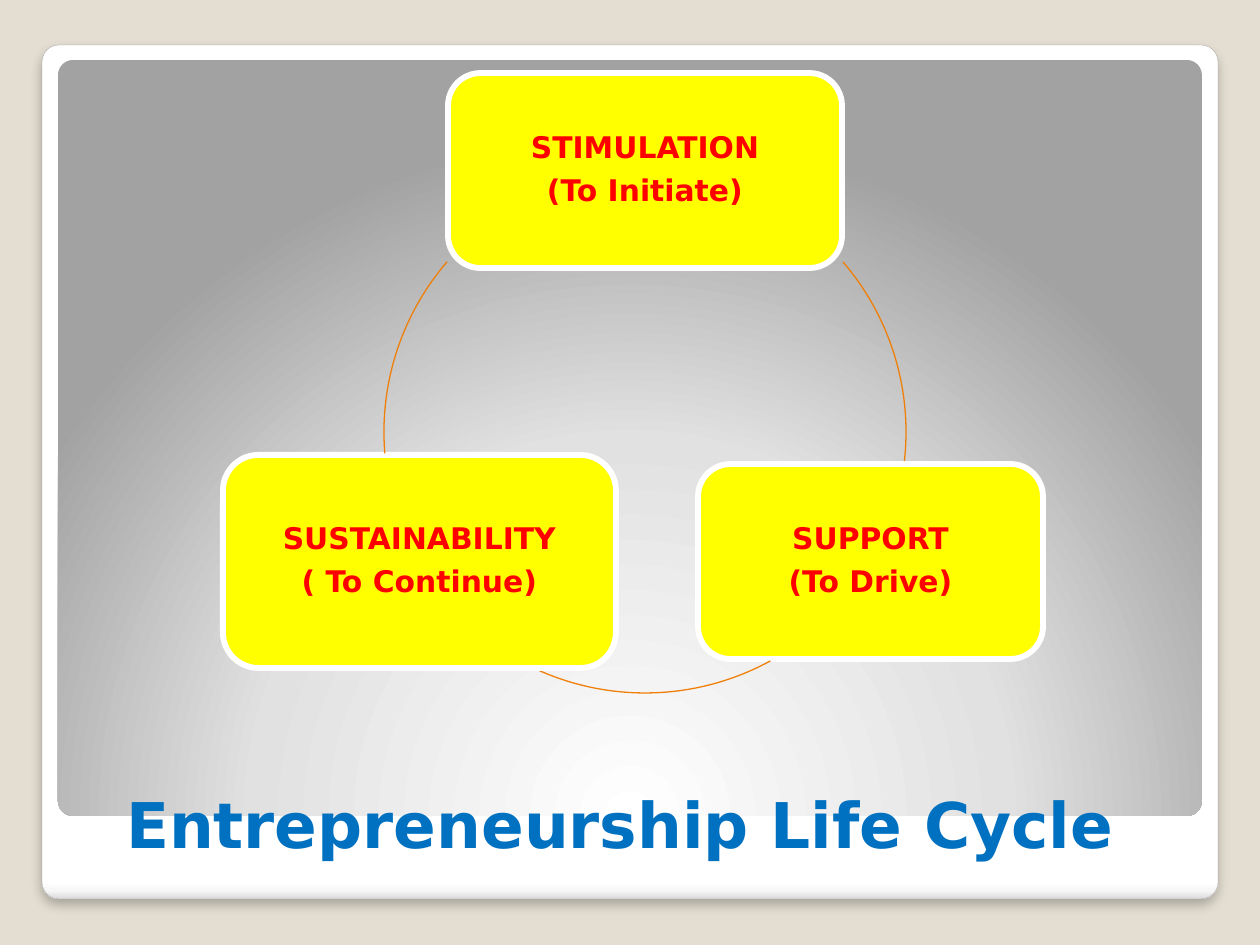
from pptx import Presentation
from pptx.dml.color import RGBColor
from pptx.enum.shapes import MSO_SHAPE as Preset
from pptx.enum.text import MSO_ANCHOR as Anchor, PP_ALIGN as Align
from pptx.oxml import parse_xml
from pptx.oxml.ns import nsdecls, qn
from pptx.util import Pt

EMU_PER_PX = 914400 / 126
FONT = "DejaVu Sans"
COLORS = {
    "background": "E3DED1",
    "frame_line": "A4A4A4",
    "title": "0070C0",
    "stage": "FFFF00",
    "stage_line": "FFFFFF",
    "stage_text": "FF0000",
    "ring": "F07F09",
    "shadow": "000000",
}
# Gradient stops: position in percent, colour
FRAME_STOPS = [(0, "FFFFFF"), (98, "FFFFFF"), (99, "F7F7F7"), (100, "DADADA")]
PANEL_STOPS = [(0, "FFFFFF"), (55, "E1E1E1"), (100, "A2A2A2")]
DOWNWARD = '<a:lin ang="5400000" scaled="0"/>'
FROM_BELOW = ('<a:path path="circle"><a:fillToRect l="50000" t="175000" '
              'r="50000" b="-75000"/></a:path>')

# Left, top, width, height in px, then the two lines of text
STAGES = [
    ((448, 73, 394, 195), ["STIMULATION", "(To Initiate)"]),
    ((698, 464, 345, 195), ["SUPPORT", "(To Drive)"]),
    ((223, 455, 393, 213), ["SUSTAINABILITY", "( To Continue)"]),
]
RING = (384, 171, 522, 522)
# Clockwise degrees from the right-hand side of the ring
RING_ARCS = [(319.3, 6.6), (61.3, 114.3), (175.3, 220.7)]


def px(length):
    return round(length * EMU_PER_PX)


def rgb(name):
    return RGBColor.from_string(COLORS[name])


def set_all(target, values):
    for attribute, value in values.items():
        setattr(target, attribute, value)


def add_preset(slide, preset, box, line=None, width=0):
    shape = slide.shapes.add_shape(preset, *map(px, box))
    shape.shadow.inherit = False
    if line:
        shape.line.color.rgb = rgb(line)
        shape.line.width = Pt(width)
    else:
        shape.line.fill.background()
    return shape


def set_gradient(shape, stops, direction):
    shape.fill.solid()
    stop_xml = "".join(
        f'<a:gs pos="{position * 1000}"><a:srgbClr val="{color}"/></a:gs>'
        for position, color in stops)
    gradient = parse_xml(f'<a:gradFill {nsdecls("a")} rotWithShape="1">'
                         f'<a:gsLst>{stop_xml}</a:gsLst>{direction}</a:gradFill>')
    properties = shape.element.spPr
    properties.replace(properties.find(qn("a:solidFill")), gradient)


def add_drop_shadow(shape):
    effects = shape.element.spPr.find(qn("a:effectLst"))
    effects.append(parse_xml(
        f'<a:outerShdw {nsdecls("a")} blurRad="{Pt(6)}" dist="{Pt(4)}" '
        f'dir="5400000" algn="t" rotWithShape="0">'
        f'<a:srgbClr val="{COLORS["shadow"]}"><a:alpha val="25000"/></a:srgbClr>'
        '</a:outerShdw>'))


def add_card(slide, box, stops, direction, **line):
    card = add_preset(slide, Preset.ROUNDED_RECTANGLE, box, **line)
    card.adjustments[0] = 0.02
    set_gradient(card, stops, direction)
    return card


def write_lines(frame, lines, size, color, paragraph_format):
    for index, text in enumerate(lines):
        paragraph = frame.add_paragraph() if index else frame.paragraphs[0]
        set_all(paragraph, paragraph_format)
        run = paragraph.add_run()
        run.text = text
        set_all(run.font, {"name": FONT, "size": Pt(size), "bold": True})
        run.font.color.rgb = rgb(color)


def add_title(slide, text):
    title = slide.shapes.add_textbox(*map(px, (69, 687, 1128, 180)))
    set_all(title.text_frame, {"word_wrap": True, "margin_left": px(57),
                               "vertical_anchor": Anchor.BOTTOM})
    write_lines(title.text_frame, [text], 36, "title", {"alignment": Align.LEFT})


def add_stage(slide, box, lines):
    stage = add_preset(slide, Preset.ROUNDED_RECTANGLE, box, "stage_line", 3.35)
    stage.fill.solid()
    stage.fill.fore_color.rgb = rgb("stage")
    set_all(stage.text_frame, {"word_wrap": True,
                               "vertical_anchor": Anchor.MIDDLE})
    write_lines(stage.text_frame, lines, 17, "stage_text",
                {"alignment": Align.CENTER, "line_spacing": 0.9,
                 "space_after": Pt(6)})


def add_ring_arc(slide, start, end):
    arc = add_preset(slide, Preset.ARC, RING, "ring", 0.75)
    arc.fill.background()
    # Angles are stored in 60000ths of a degree, adjustments in 100000ths
    for index, angle in enumerate((start, end)):
        arc.adjustments[index] = angle * 0.6


def main():
    deck = Presentation()
    set_all(deck, {"slide_width": px(1260), "slide_height": px(945)})
    slide = deck.slides.add_slide(deck.slide_layouts[6])

    # Background, white frame and grey panel
    slide.background.fill.solid()
    slide.background.fill.fore_color.rgb = rgb("background")
    frame = add_card(slide, (42, 45, 1176, 854), FRAME_STOPS, DOWNWARD,
                     line="frame_line", width=0.16)
    add_drop_shadow(frame)
    add_card(slide, (58, 60, 1144, 756), PANEL_STOPS, FROM_BELOW)

    add_title(slide, "Entrepreneurship Life Cycle")

    # Life cycle: each stage and the arc to the next one
    for (box, lines), (start, end) in zip(STAGES, RING_ARCS):
        add_stage(slide, box, lines)
        add_ring_arc(slide, start, end)

    deck.save("out.pptx")


if __name__ == "__main__":
    main()
